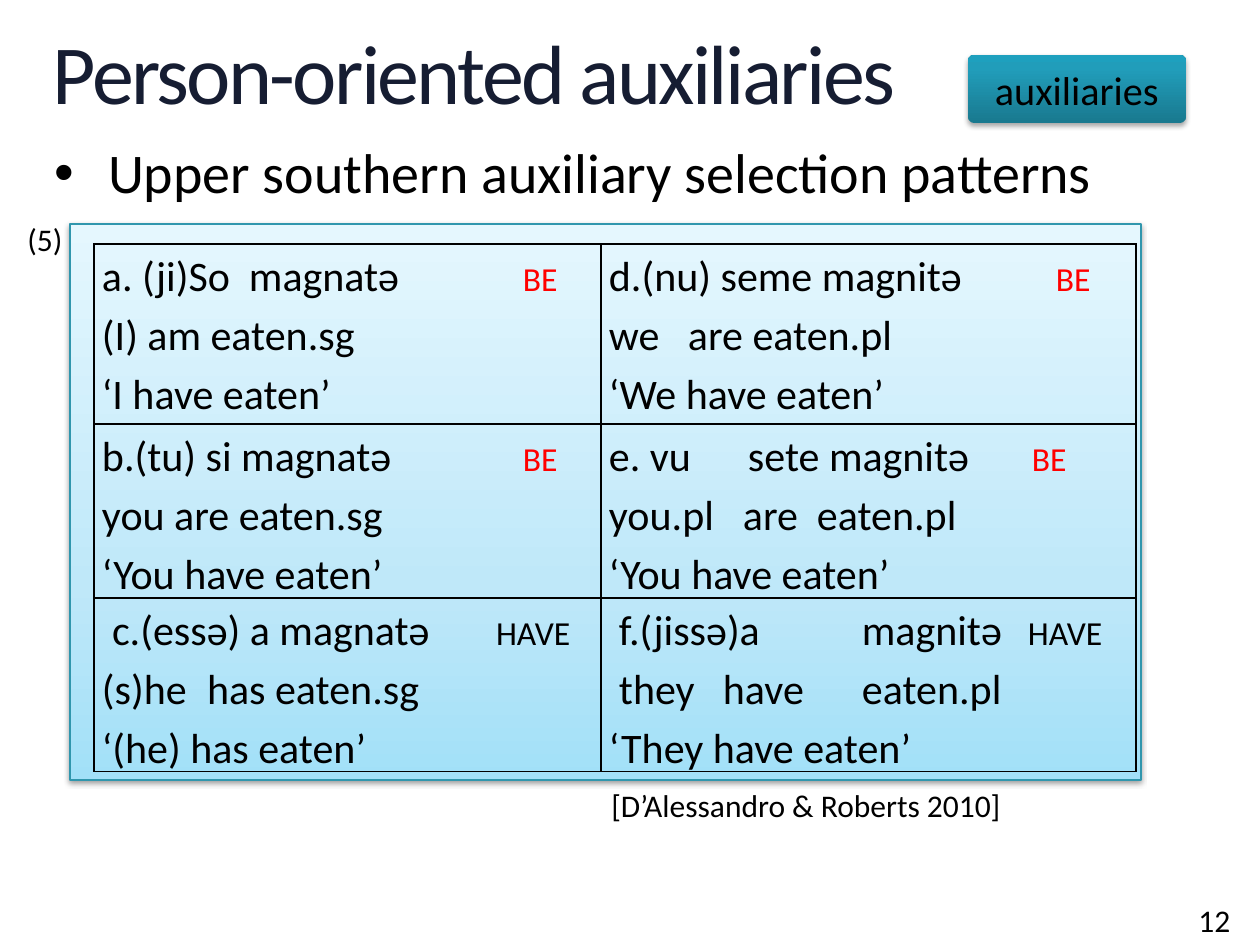
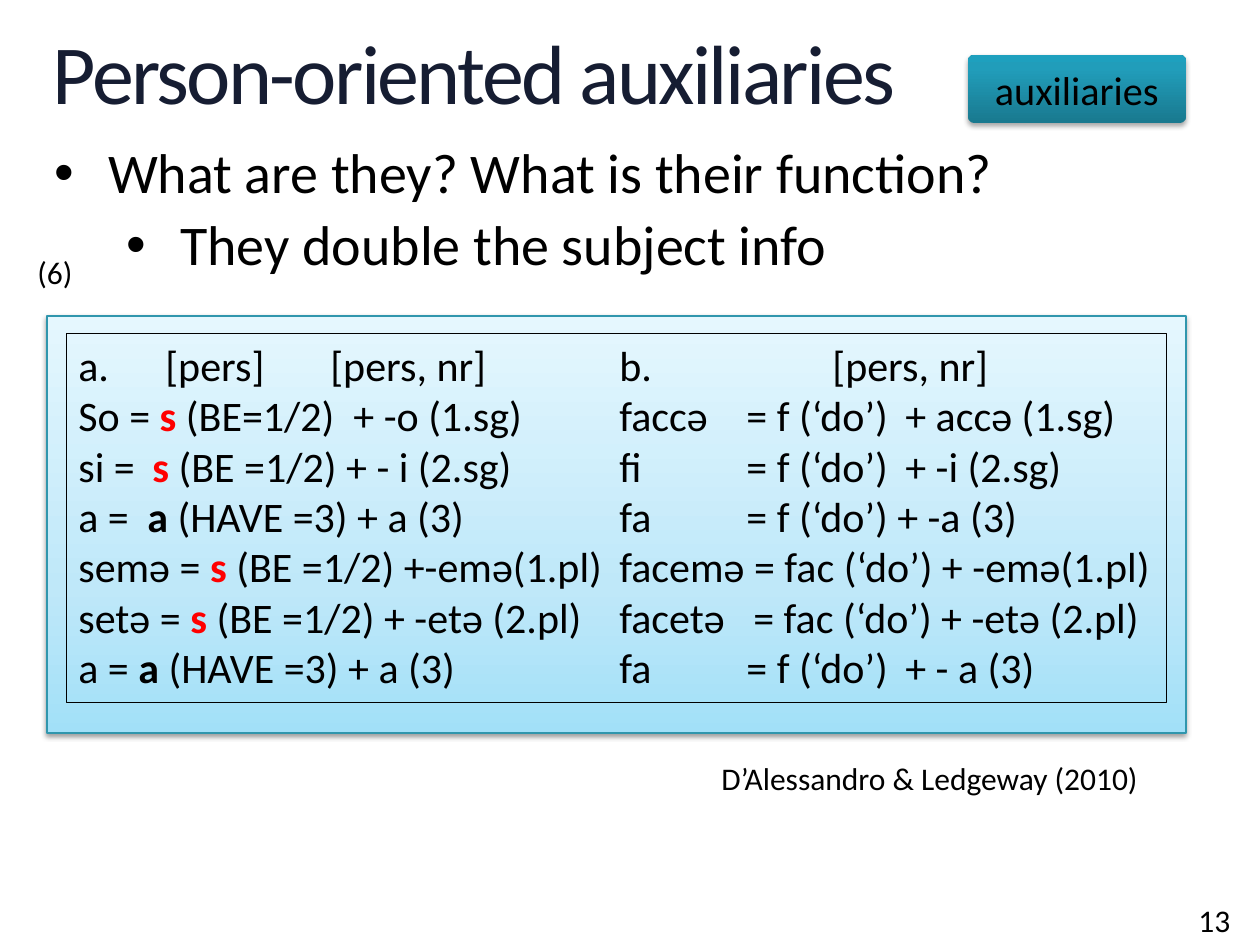
from copy import deepcopy

from lxml import etree
from pptx import Presentation
from pptx.dml.color import RGBColor
from pptx.enum.shapes import MSO_SHAPE
from pptx.enum.text import MSO_ANCHOR, MSO_AUTO_SIZE, PP_ALIGN
from pptx.oxml.ns import qn
from pptx.util import Emu, Pt

RECT, ROUNDED = MSO_SHAPE.RECTANGLE, MSO_SHAPE.ROUNDED_RECTANGLE
TOP, MIDDLE = MSO_ANCHOR.TOP, MSO_ANCHOR.MIDDLE
LEFT, CENTER = PP_ALIGN.LEFT, PP_ALIGN.CENTER
NO_FIT = MSO_AUTO_SIZE.NONE

PX_PER_INCH = 126
FONT = "Calibri"
BLACK = RGBColor(0x00, 0x00, 0x00)
RED = RGBColor(0xFF, 0x00, 0x00)
NAVY = RGBColor(0x16, 0x1D, 0x32)
TEAL = RGBColor(0x30, 0x96, 0xAD)
PANEL_STOPS = [(0, RGBColor(0xA2, 0xE0, 0xF8)), (0.35, RGBColor(0xBF, 0xE8, 0xF9)),
               (1, RGBColor(0xE5, 0xF7, 0xFE))]
BADGE_STOPS = [(0, RGBColor(0x19, 0x79, 0x8F)), (0.8, RGBColor(0x21, 0x9D, 0xBA)),
               (1, RGBColor(0x1E, 0xA0, 0xBE))]

TITLE = "Person-oriented auxiliaries"
BE = ("be", {"color": RED, "small": True})
HAVE = ("have", {"small": True})
S = ("s", {"color": RED, "bold": True})
A = ("a", {"bold": True})

PARADIGM = [
    [[([147, 421], ["a. (ji)So\tmagnatə\t", BE]),
      ([], ["(I) am eaten.sg"]),
      ([], ["‘I have eaten’"])],
     [([447], ["d.(nu) seme magnitə\t", BE]),
      ([79], ["we\tare eaten.pl"]),
      ([], ["‘We have eaten’"])]],
    [[([421], ["b.(tu) si magnatə\t", BE]),
      ([], ["you are eaten.sg"]),
      ([], ["‘You have eaten’"])],
     [([139, 423], ["e. vu\tsete magnitə\t", BE]),
      ([134, 208], ["you.pl\tare\teaten.pl"]),
      ([], ["‘You have eaten’"])]],
    [[([10, 394], ["\tc.(essə) a magnatə\t", HAVE]),
      ([105], ["(s)he\thas eaten.sg"]),
      ([], ["‘(he) has eaten’"])],
     [([10, 253, 419], ["\tf.(jissə)a\tmagnitə\t", HAVE]),
      ([10, 114, 253], ["\tthey\thave\teaten.pl"]),
      ([], ["‘They have eaten’"])]],
]

FORMS = [
    ([87, 252, 541, 754], ["a.\t[pers]\t[pers, nr]\tb.\t[pers, nr]"]),
    ([275, 541, 668, 827],
     ["So = ", S, " (BE=1/2)\t+ -o (1.sg)\tfaccə\t= f (‘do’)\t+ accə (1.sg)"]),
    ([74, 541, 668, 827],
     ["si =\t", S, " (BE =1/2) + - i (2.sg)\tfi\t= f (‘do’)\t+ -i (2.sg)"]),
    ([69, 541, 668], ["a =\t", A, " (HAVE =3) + a (3)\tfa\t= f (‘do’) + -a (3)"]),
    ([541], ["semə = ", S, " (BE =1/2) +-emə(1.pl)\tfacemə = fac (‘do’) + -emə(1.pl)"]),
    ([541, 675],
     ["setə = ", S, " (BE =1/2) + -etə (2.pl)\tfacetə\t= fac (‘do’) + -etə (2.pl)"]),
    ([541, 668, 827], ["a = ", A, " (HAVE =3) + a (3)\tfa\t= f (‘do’)\t+ - a (3)"]),
]


def px(n):
    """Turn px into EMU."""
    return Emu(round(n * 914400 / PX_PER_INCH))


def box_emu(box):
    """Turn a left, top, width, height box into EMU."""
    return [px(n) for n in box]


def apply(target, **values):
    """Set each named attribute on the target."""
    for name, value in values.items():
        setattr(target, name, value)


def node(parent, tag, **attrs):
    """Append a drawing element with attributes."""
    return etree.SubElement(parent, qn(tag), {k: str(v) for k, v in attrs.items()})


def add_run(p, text, size, color=BLACK, bold=False, small=False):
    """Add one formatted run to a paragraph."""
    r = p.add_run()
    r.text = text
    apply(r.font, name=FONT, size=Pt(size), bold=bold)
    r.font.color.rgb = color
    if small:
        r.font._element.set("cap", "small")
    return r


def paragraphs(tf, count):
    """Return the given number of paragraphs in a text frame."""
    return [tf.paragraphs[0]] + [tf.add_paragraph() for _ in range(count - 1)]


def write_lines(tf, lines, size, spacing=1.0):
    """Write lines of runs, each line with its own tab stops."""
    for p, (stops, runs) in zip(paragraphs(tf, len(lines)), lines):
        if stops:
            tabs = node(p._p.get_or_add_pPr(), "a:tabLst")
            for stop in stops:
                node(tabs, "a:tab", pos=px(stop), algn="l")
        apply(p, alignment=LEFT, line_spacing=spacing)
        for run in runs:
            text, style = (run, {}) if isinstance(run, str) else run
            add_run(p, text, size, **style)


def add_label(s, box, text):
    """Add a small line of text."""
    tf = s.shapes.add_textbox(*box_emu(box)).text_frame
    tf.word_wrap = True
    write_lines(tf, [([], [text])], 18)


def add_gradient_shape(s, kind, box, stops, opacity):
    """Add a shape with an upward gradient and a soft shadow below."""
    sp = s.shapes.add_shape(kind, *box_emu(box))
    sp.fill.gradient()
    sp.fill.gradient_angle = 90
    gs_list = sp._element.spPr.find(".//" + qn("a:gsLst"))
    gs_list.append(deepcopy(gs_list[-1]))
    for stop, (position, color) in zip(sp.fill.gradient_stops, stops):
        stop.position = position
        stop.color.rgb = color
    sp.shadow.inherit = False
    effects = sp._element.spPr.find(qn("a:effectLst"))
    shadow = node(effects, "a:outerShdw", blurRad=Pt(3.1), dist=Pt(1.7),
                  dir=5400000, rotWithShape=0)
    node(node(shadow, "a:srgbClr", val=BLACK), "a:alpha", val=opacity * 1000)
    return sp


def add_panel(s, box):
    """Add the pale blue panel behind the examples."""
    sp = add_gradient_shape(s, RECT, box, PANEL_STOPS, 38)
    sp.line.color.rgb = TEAL
    sp.line.width = Pt(0.75)


def add_badge(s, box):
    """Add the topic badge at the top right."""
    sp = add_gradient_shape(s, ROUNDED, box, BADGE_STOPS, 35)
    sp.adjustments[0] = 0.09
    sp.line.fill.background()
    tf = sp.text_frame
    apply(tf, vertical_anchor=MIDDLE, word_wrap=True)
    tf.paragraphs[0].alignment = CENTER
    add_run(tf.paragraphs[0], "auxiliaries", 23)


def add_title(s, box):
    """Place and format the title placeholder."""
    sp = s.shapes.title
    apply(sp, **dict(zip(("left", "top", "width", "height"), box_emu(box))))
    tf = sp.text_frame
    apply(tf, margin_left=0, margin_top=0, margin_right=0, margin_bottom=0,
          vertical_anchor=TOP, auto_size=NO_FIT, word_wrap=True)
    p = tf.paragraphs[0]
    apply(p, alignment=LEFT, line_spacing=0.9)
    add_run(p, TITLE, 48, NAVY).font._element.set("spc", "-150")


def add_bullets(s, box, texts):
    """Add bullets, each one level deeper than the one before."""
    tf = s.shapes.add_textbox(*box_emu(box)).text_frame
    apply(tf, margin_left=0, margin_top=0, margin_right=0, margin_bottom=0,
          word_wrap=True)
    for level, (p, text) in enumerate(zip(paragraphs(tf, len(texts)), texts)):
        pPr = p._p.get_or_add_pPr()
        pPr.set("marL", str(px(54 + 72 * level)))
        pPr.set("indent", str(px(-54)))
        node(pPr, "a:buFont", typeface="Arial")
        node(pPr, "a:buChar", char="•")
        apply(p, level=level, line_spacing=0.9, space_before=Pt(6.4 if level else 0))
        add_run(p, text, 32)


def add_paradigm(s, box):
    """Add the table of conjugated forms."""
    left, top, width, height = box
    table = s.shapes.add_table(3, 2, *box_emu(box)).table
    apply(table, first_row=False, horz_banding=False)
    first_col, first_row = 507, 180
    table.columns[0].width = px(first_col)
    table.columns[1].width = px(width - first_col)
    for i, row in enumerate(table.rows):
        row.height = px((height - first_row) // 2 if i else first_row)
        for cell, lines in zip(row.cells, PARADIGM[i]):
            apply(cell, margin_left=px(8), margin_right=px(8),
                  margin_top=0, margin_bottom=0)
            write_lines(cell.text_frame, lines, 24, 1.15)
            for side in "LRTB":
                border = node(cell._tc.get_or_add_tcPr(), "a:ln" + side, w=Pt(1))
                node(node(border, "a:solidFill"), "a:srgbClr", val=BLACK)
            cell.fill.background()


def add_forms(s, box):
    """Add the outlined box that splits the verb forms."""
    sp = s.shapes.add_shape(RECT, *box_emu(box))
    sp.shadow.inherit = False
    sp.fill.background()
    sp.line.color.rgb = BLACK
    sp.line.width = Pt(0.5)
    apply(sp.text_frame, vertical_anchor=TOP, word_wrap=True)
    write_lines(sp.text_frame, FORMS, 24)


def add_frame(prs, number, bullets):
    """Add a slide with the title, badge, bullets and page number."""
    s = prs.slides.add_slide(prs.slide_layouts[5])
    add_title(s, (53, 32, 1155, 92))
    add_badge(s, (968, 55, 218, 68))
    add_bullets(s, (54, 145, 1153, 60 if len(bullets) == 1 else 136), bullets)
    add_label(s, (1186, 895, 74, 50), str(number))
    return s


def patterns_slide(prs):
    """Build the slide of selection patterns."""
    s = add_frame(prs, 12, ["Upper southern auxiliary selection patterns"])
    add_panel(s, (70, 224, 1071, 556))
    add_paradigm(s, (94, 244, 1042, 526))
    add_label(s, (15, 214, 69, 50), "(5)")
    add_label(s, (599, 780, 517, 50), "[D’Alessandro & Roberts 2010]")


def function_slide(prs):
    """Build the slide on the function of the auxiliaries."""
    s = add_frame(prs, 13, ["What are they? What is their function?",
                            "They double the subject info"])
    add_panel(s, (47, 316, 1139, 417))
    add_forms(s, (66, 333, 1101, 369))
    add_label(s, (25, 247, 79, 50), "(6)")
    add_label(s, (709, 753, 460, 50), "D’Alessandro & Ledgeway (2010)")


def main():
    """Build and save the presentation."""
    prs = Presentation()
    prs.slide_width, prs.slide_height = px(1260), px(945)
    patterns_slide(prs)
    function_slide(prs)
    prs.save("out.pptx")


if __name__ == "__main__":
    main()
